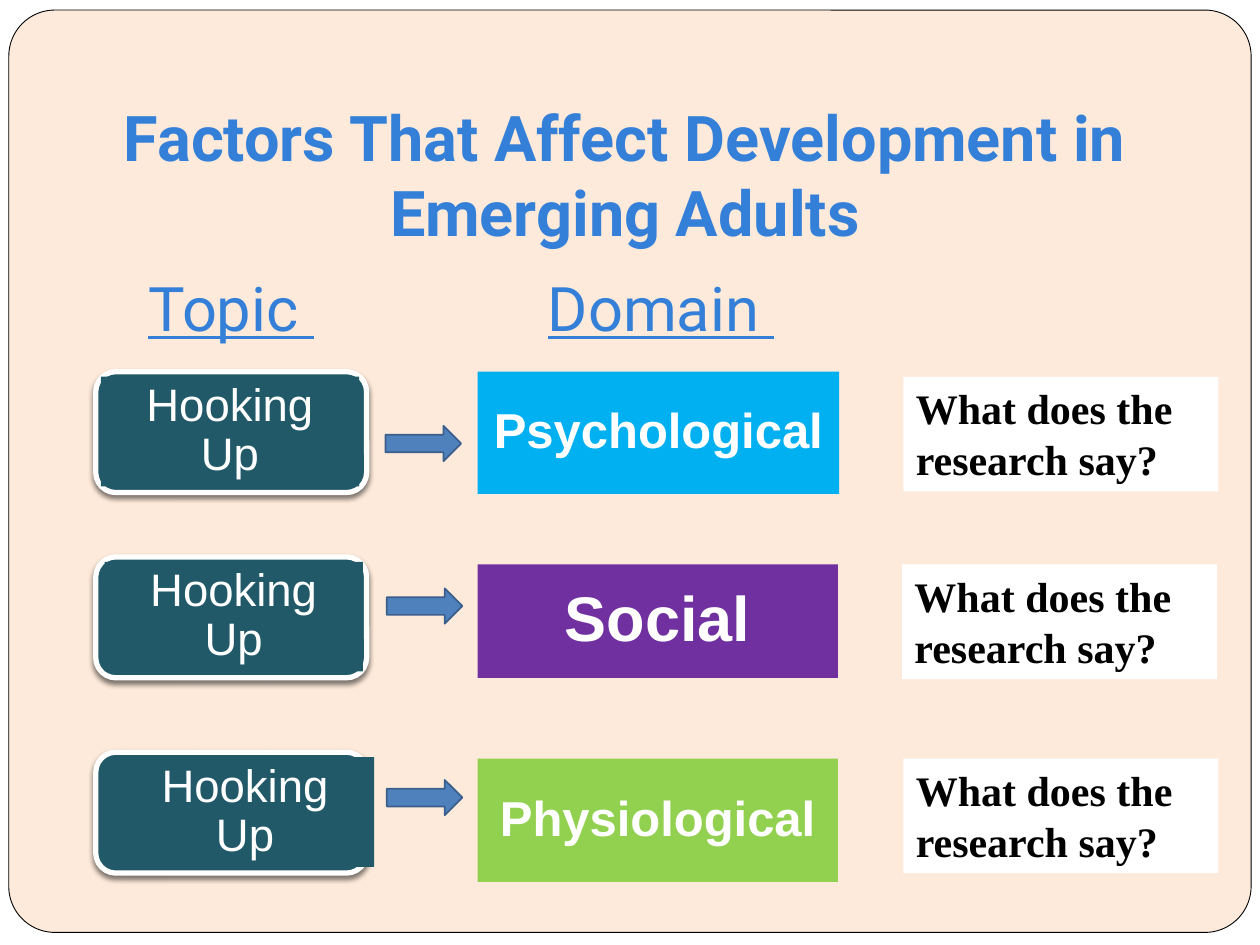
from dataclasses import dataclass
from typing import Optional

from lxml.etree import SubElement
from pptx import Presentation
from pptx.dml.color import RGBColor
from pptx.enum.shapes import MSO_SHAPE as Preset
from pptx.enum.text import MSO_ANCHOR as Anchor, PP_ALIGN as Align
from pptx.oxml.ns import qn
from pptx.util import Inches, Pt

WIDTH, HEIGHT = Inches(10), Inches(7.5)
COLUMN, ROW = WIDTH / 100, HEIGHT / 75

COLORS = {
    "sheet": "FFFFFF", "peach": "FDEADA", "ink": "000000", "heading": "347FD8",
    "teal": "215968", "arrow": "4F81BD", "arrow edge": "3A5F8C",
    "sky": "00B0F0", "purple": "7030A0", "green": "92D050",
}


@dataclass(frozen=True)
class Area:
    """Left, top, width and height in grid columns and rows."""
    left: float
    top: float
    width: float
    height: float

    def emu(self) -> tuple:
        return (round(self.left * COLUMN), round(self.top * ROW),
                round(self.width * COLUMN), round(self.height * ROW))


@dataclass(frozen=True)
class TextStyle:
    font: dict
    color: str
    para: dict
    frame: dict


@dataclass(frozen=True)
class FactorRow:
    domain: str
    color: str
    size: float
    card_top: float
    label_left: float
    arrow: tuple
    domain_box: Area
    question: tuple


def insets(left: float, top: float, right: float, bottom: float) -> dict:
    return {"margin_left": Inches(left), "margin_top": Inches(top),
            "margin_right": Inches(right), "margin_bottom": Inches(bottom)}


HEADING_FRAME = {"vertical_anchor": Anchor.BOTTOM, **insets(0.1, 0.05, 0.1, 0.1)}
CENTERED = {"alignment": Align.CENTER, "line_spacing": 0.9}

TITLE = TextStyle({"name": "Roboto", "size": Pt(36), "bold": True}, "heading",
                  {"alignment": Align.CENTER}, HEADING_FRAME)
COLUMN_HEAD = TextStyle({"name": "Roboto", "size": Pt(35.1), "underline": True},
                        "heading", {"alignment": Align.LEFT}, HEADING_FRAME)
TOPIC = TextStyle({"name": "Arial", "size": Pt(26)}, "sheet", CENTERED,
                  {"vertical_anchor": Anchor.MIDDLE,
                   **insets(0.11, 0.05, 0.11, 0.05)})
QUESTION = TextStyle({"name": "Times New Roman", "size": Pt(24), "bold": True},
                     "ink", {"alignment": Align.LEFT},
                     {"vertical_anchor": Anchor.TOP,
                      **insets(0.1, 0.05, 0.1, 0.05)})

FACTORS = [
    FactorRow("Psychological", "sky", 28, 29.5, 8, (30.6, 33.8),
              Area(37.9, 29.5, 28.7, 9.7), (71.7, 29.9)),
    FactorRow("Social", "purple", 36, 44.2, 8.3, (30.7, 46.7),
              Area(37.9, 44.8, 28.6, 9), (71.6, 44.8)),
    FactorRow("Physiological", "green", 28, 59.7, 9.2, (30.7, 61.9),
              Area(37.9, 60.2, 28.6, 9.8), (71.7, 60.2)),
]


def rgb(name: str) -> RGBColor:
    return RGBColor.from_string(COLORS[name])


def assign(target, values: dict) -> None:
    for name, value in values.items():
        setattr(target, name, value)


def domain_style(size: float) -> TextStyle:
    return TextStyle({"name": "Arial", "size": Pt(size), "bold": True}, "sheet",
                     CENTERED, {"vertical_anchor": Anchor.MIDDLE,
                                **insets(0.06, 0.03, 0.06, 0.03)})


def write(box, text: str, style: TextStyle) -> None:
    frame = box.text_frame
    assign(frame, {"word_wrap": True, **style.frame})
    para = frame.paragraphs[0]
    para.text = text
    assign(para, style.para)
    for span in para.runs:
        assign(span.font, style.font)
        span.font.color.rgb = rgb(style.color)


def add_text(page, area: Area, text: str, style: TextStyle) -> None:
    write(page.shapes.add_textbox(*area.emu()), text, style)


def add_box(page, preset, area: Area, fill: str, edge: Optional[str] = None,
            edge_width: float = 1):
    box = page.shapes.add_shape(preset, *area.emu())
    box.shadow.inherit = False
    box.fill.solid()
    box.fill.fore_color.rgb = rgb(fill)
    if edge:
        box.line.color.rgb = rgb(edge)
        box.line.width = Pt(edge_width)
    else:
        box.line.fill.background()
    return box


def add_drop_shadow(box) -> None:
    effects = box.element.spPr.find(qn("a:effectLst"))
    shadow = SubElement(effects, qn("a:outerShdw"), blurRad=str(Pt(3)),
                        dist=str(Pt(2)), dir="5400000", rotWithShape="0")
    color = SubElement(shadow, qn("a:srgbClr"), val=COLORS["ink"])
    SubElement(color, qn("a:alpha"), val="50000")


def add_background(page) -> None:
    page.background.fill.solid()
    page.background.fill.fore_color.rgb = rgb("peach")
    add_box(page, Preset.RECTANGLE, Area(0, 0, 100, 75), "sheet")
    panel = add_box(page, Preset.ROUNDED_RECTANGLE, Area(0.7, 0.8, 98.6, 73.2),
                    "peach", "ink", 0.5)
    panel.adjustments[0] = 0.05


def add_factor(page, factor: FactorRow) -> None:
    domain = add_box(page, Preset.RECTANGLE, factor.domain_box, factor.color)
    write(domain, factor.domain, domain_style(factor.size))

    card = add_box(page, Preset.ROUNDED_RECTANGLE,
                   Area(7.6, factor.card_top, 21.5, 9.6), "teal", "sheet", 3)
    add_drop_shadow(card)
    label = add_box(page, Preset.RECTANGLE,
                    Area(factor.label_left, factor.card_top + 0.4, 20.5, 8.7), "teal")
    write(label, "Hooking Up", TOPIC)

    add_box(page, Preset.RIGHT_ARROW, Area(*factor.arrow, 6, 2.8),
            "arrow", "arrow edge")
    question = add_box(page, Preset.RECTANGLE, Area(*factor.question, 25, 9.1), "sheet")
    write(question, "What does the research say?", QUESTION)


def main() -> None:
    deck = Presentation()
    deck.slide_width, deck.slide_height = WIDTH, HEIGHT
    page = deck.slides.add_slide(deck.slide_layouts[6])

    add_background(page)
    add_text(page, Area(7.1, 8.3, 85, 12.5),
             "Factors That Affect Development in\vEmerging Adults", TITLE)
    for factor in FACTORS:
        add_factor(page, factor)
    for left, heading in ((10.8, "Topic "), (42.5, "Domain ")):
        add_text(page, Area(left, 15.8, 20, 12.5), heading, COLUMN_HEAD)
    deck.save("out.pptx")


if __name__ == "__main__":
    main()
